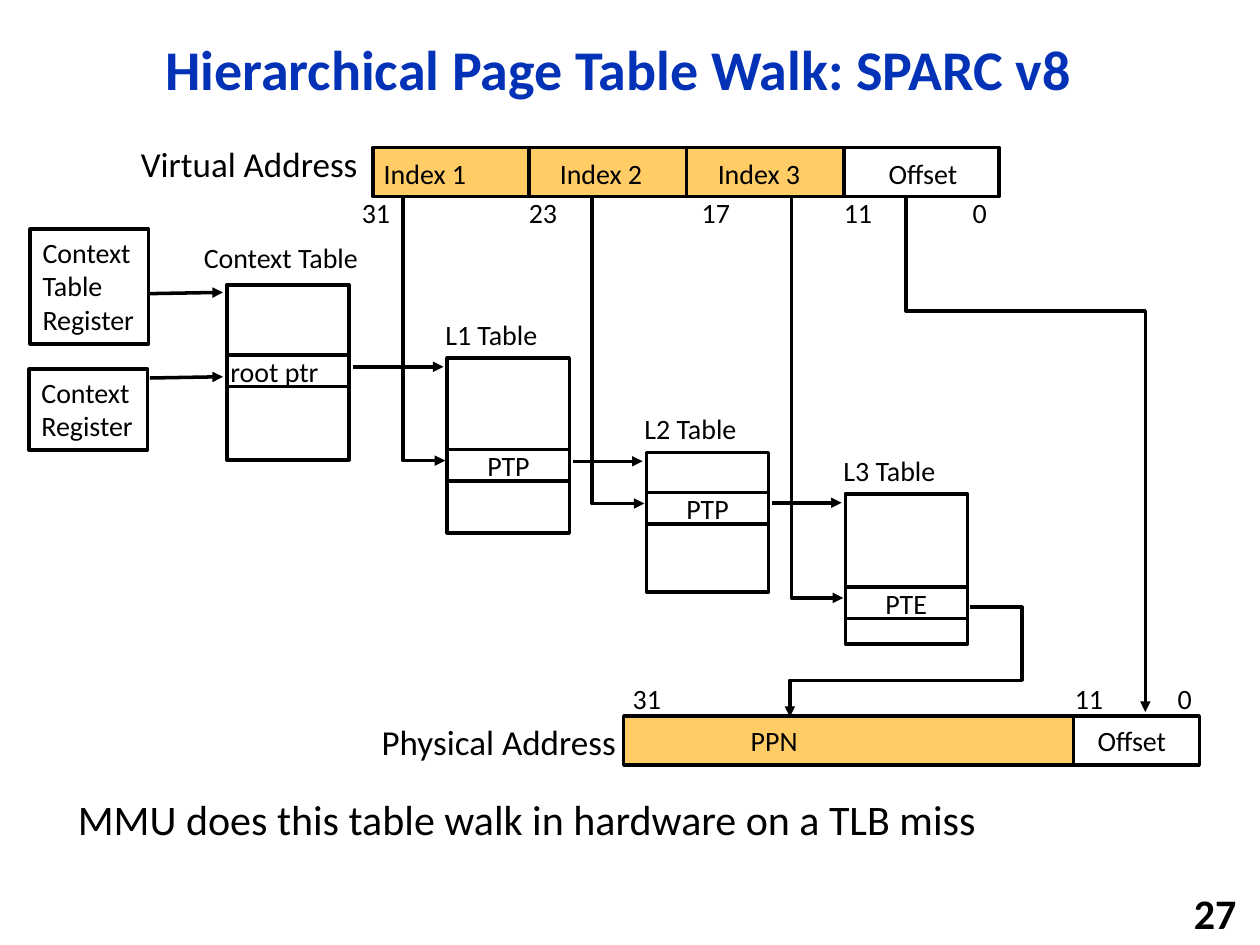
from dataclasses import dataclass

from lxml import etree
from pptx import Presentation
from pptx import util as u
from pptx.dml.color import RGBColor
from pptx.enum import shapes, text
from pptx.oxml import ns

Pt = u.Pt


@dataclass(frozen=True)
class Theme:
    font: str = "Calibri"
    ink: str = "000000"
    title: str = "0332B7"
    field: str = "FFCC66"
    paper: str = "FFFFFF"
    title_size: int = 32
    note_size: int = 24
    address_size: int = 20
    label_size: int = 16
    stroke: int = 2


THEME = Theme()
TABLE_WIDTH = 69.8
ENTRY_HEIGHT = 18
FIELD_HEIGHT = 28.1


def assign(target, values):
    for name, value in values.items():
        setattr(target, name, value)


def write(shape, words, size=THEME.label_size, color=THEME.ink, bold=False,
          align=text.PP_ALIGN.LEFT, anchor=text.MSO_ANCHOR.TOP, wrap=False,
          spacing=1.0):
    frame = shape.text_frame
    assign(frame, {
        "auto_size": text.MSO_AUTO_SIZE.NONE, "word_wrap": wrap,
        "vertical_anchor": anchor,
        "margin_left": Pt(7.2), "margin_right": Pt(7.2),
        "margin_top": Pt(3.6), "margin_bottom": Pt(3.6),
    })
    frame.text = words
    for para in frame.paragraphs:
        assign(para, {"alignment": align, "line_spacing": spacing})
        for span in para.runs:
            assign(span.font, {"name": THEME.font, "size": Pt(size), "bold": bold})
            span.font.color.rgb = RGBColor.from_string(color)


def add_label(page, words, left, top, width, height=26.6, **style):
    box = page.shapes.add_textbox(Pt(left), Pt(top), Pt(width), Pt(height))
    write(box, words, **style)


def add_box(page, left, top, width, height, fill=None, outlined=True):
    box = page.shapes.add_shape(shapes.MSO_SHAPE.RECTANGLE,
                                Pt(left), Pt(top), Pt(width), Pt(height))
    box.shadow.inherit = False
    if fill:
        box.fill.solid()
        box.fill.fore_color.rgb = RGBColor.from_string(fill)
    else:
        box.fill.background()
    if outlined:
        ink_line(box)
    else:
        box.line.fill.background()
    return box


def ink_line(shape, arrow=False):
    shape.line.color.rgb = RGBColor.from_string(THEME.ink)
    shape.line.width = Pt(THEME.stroke)
    if arrow:
        outline = shape.element.spPr.find(ns.qn("a:ln"))
        etree.SubElement(outline, ns.qn("a:tailEnd"), type="triangle")


def add_line(page, start, end, arrow=False):
    line = page.shapes.add_connector(shapes.MSO_CONNECTOR.STRAIGHT,
                                     *map(Pt, start + end))
    ink_line(line, arrow)
    etree.SubElement(line.element.spPr, ns.qn("a:effectLst"))


def add_route(page, start, *corners):
    """Bent arrow through the given corners."""
    builder = page.shapes.build_freeform(Pt(start[0]), Pt(start[1]))
    builder.add_line_segments([(Pt(x), Pt(y)) for x, y in corners], close=False)
    route = builder.convert_to_shape()
    route.shadow.inherit = False
    route.fill.background()
    ink_line(route, arrow=True)


def add_address(page, left, top, width, filled, dividers):
    """Address word: shaded fields, an outline and field borders."""
    add_box(page, left, top, filled, FIELD_HEIGHT, THEME.field, outlined=False)
    add_box(page, left, top, width, FIELD_HEIGHT)
    for x in dividers:
        add_line(page, (x, top), (x, top + FIELD_HEIGHT))


def add_page_table(page, name, entry, left, top, height, entry_top,
                   name_shift=(-8.2, -26.7), name_width=69,
                   entry_shift=15.8, entry_width=39):
    add_box(page, left, top, TABLE_WIDTH, height, THEME.paper)
    for y in (entry_top, entry_top + ENTRY_HEIGHT):
        add_line(page, (left, y), (left + TABLE_WIDTH, y))
    add_label(page, entry, left + entry_shift, entry_top - 4, entry_width)
    add_label(page, name, left + name_shift[0], top + name_shift[1], name_width)


def add_row(page, top, labels):
    for words, left, width in labels:
        add_label(page, words, left, top, width, wrap=True)


def main():
    deck = Presentation()
    assign(deck, {"slide_width": Pt(720), "slide_height": Pt(540)})
    page = deck.slides.add_slide(deck.slide_layouts[5])

    # Title and page number
    title = page.shapes.title
    assign(title, {"left": Pt(66.2), "top": Pt(12.2),
                   "width": Pt(574.6), "height": Pt(58.3)})
    write(title, "Hierarchical Page Table Walk: SPARC v8", THEME.title_size,
          THEME.title, bold=True, align=text.PP_ALIGN.CENTER,
          anchor=text.MSO_ANCHOR.MIDDLE, wrap=True, spacing=0.9)
    add_label(page, "27", 563.8, 509.8, 149.8, 23, size=THEME.note_size,
              bold=True, align=text.PP_ALIGN.RIGHT,
              anchor=text.MSO_ANCHOR.MIDDLE, wrap=True)

    # Virtual address
    add_label(page, "Virtual Address", 73.4, 77.8, 139.7, 31,
              size=THEME.address_size)
    add_address(page, 213.1, 84.2, 357.8, 269.3, (302.4, 392.4, 482.4))
    add_row(page, 85.7, [("Index 1", 212.2, 64), ("Index 2", 312.8, 64),
                         ("Index 3", 403.1, 64), ("Offset", 500.8, 56)])
    add_row(page, 108, [("31", 199.7, 33), ("23", 295.1, 33), ("17", 393.9, 33),
                        ("11", 475.1, 33), ("0", 548.8, 25)])

    # Context registers
    for words, left, top, height, arrow_y in (
            ("Context\nTable\nRegister", 17.3, 131, 65.5, 167.8),
            ("Context\nRegister", 16.6, 211, 46.1, 216)):
        write(add_box(page, left, top, 67.7, height), words)
        add_line(page, (85.7, arrow_y), (127.4, arrow_y - 0.7), arrow=True)

    # Page tables
    add_page_table(page, "Context Table", "root ptr", 129.6, 162.7, 100.1, 203,
                   (-20.2, -28.8), 105, -5, 65.5)
    levels = (("L1 Table", "PTP", 255.6, 204.5, 100.1, 257, 230.4),
              ("L2 Table", "PTP", 369.4, 258.5, 79.9, 281.5, 338.4),
              ("L3 Table", "PTE", 483.1, 282.2, 85.7, 335.5, 452.2))
    previous = 129.6
    for *table, index_x in levels:
        left, top, entry_top = table[2], table[3], table[5]
        add_page_table(page, *table)
        # Pointer from the table before, and index from the virtual address
        pointer_y = top + 5.1
        add_line(page, (previous + TABLE_WIDTH + 2.2, pointer_y),
                 (left - 2.2, pointer_y), arrow=True)
        add_route(page, (index_x, 113), (index_x, entry_top + 6.2),
                  (left - 1.2, entry_top + 6.2))
        previous = left

    # Physical address
    add_label(page, "Physical Address", 211, 408.2, 150.5, 31,
              size=THEME.address_size)
    add_address(page, 356.4, 409, 329, 257, (613.4,))
    add_row(page, 385.9, [("31", 354.5, 33), ("11", 607.1, 33), ("0", 665.9, 25)])
    add_row(page, 409.7, [("PPN", 421.9, 46), ("Offset", 620.2, 56)])
    add_route(page, (517.7, 112.3), (517.7, 177.8), (654.5, 177.8), (654.5, 406.8))
    add_route(page, (554.4, 347), (583.9, 347), (583.9, 388.8),
              (451.4, 388.8), (451.4, 409.7))

    # Closing remark
    add_label(page, "MMU does this table walk in hardware on a TLB miss",
              37.4, 450, 534.2, 36, size=THEME.note_size)

    deck.save("out.pptx")


if __name__ == "__main__":
    main()
